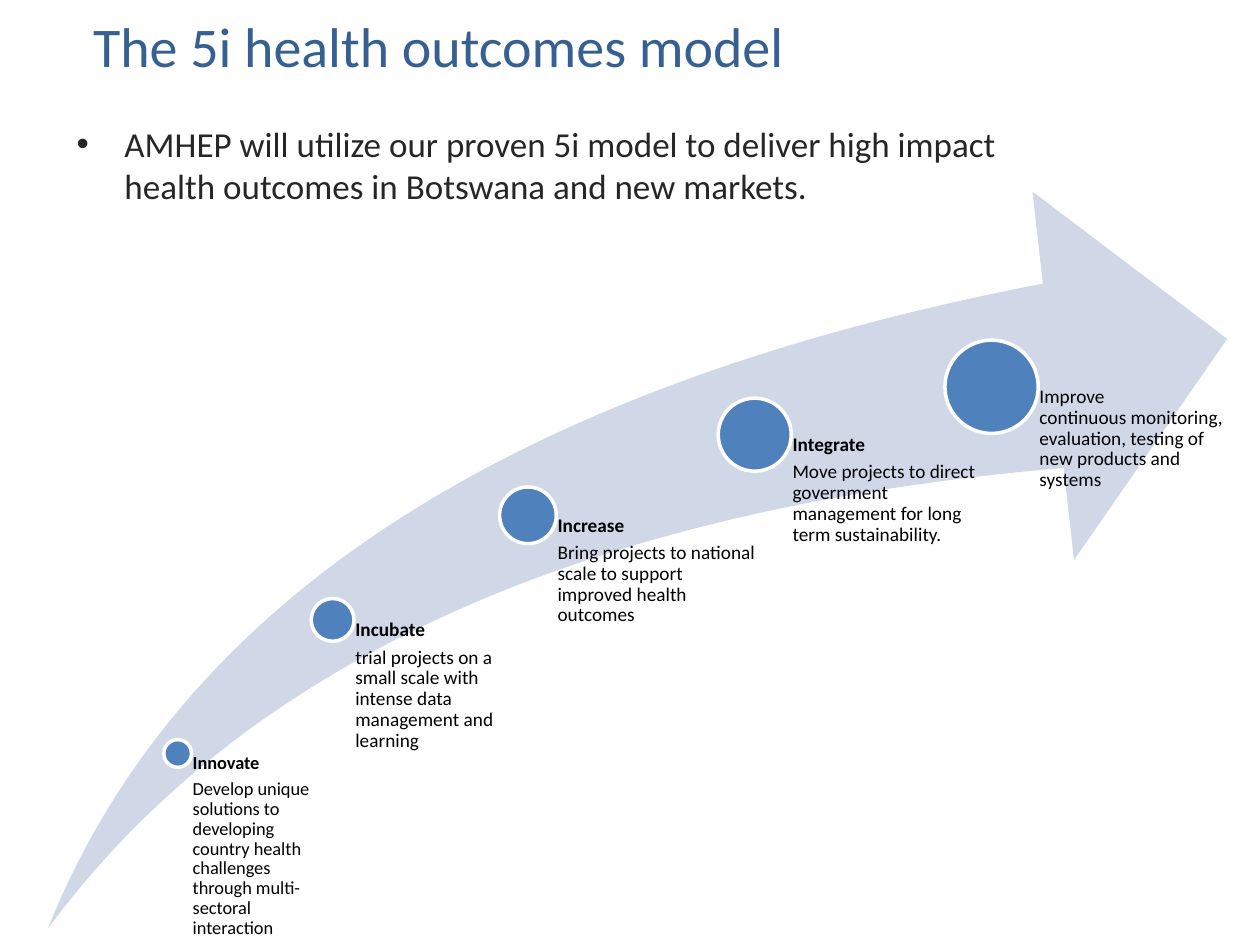
from dataclasses import dataclass

from lxml import etree
from pptx import Presentation
from pptx import util as u
from pptx.dml.color import RGBColor
from pptx.enum import shapes, text
from pptx.oxml import ns


@dataclass(frozen=True)
class Theme:
    font: str = "Calibri"
    title: str = "376092"
    body: str = "262626"
    label: str = "000000"
    swoosh: str = "D0D8E8"
    dot: str = "4F81BD"
    ring: str = "FFFFFF"
    title_size: float = 32
    body_size: float = 20
    label_size: float = 11
    small_label_size: float = 10.5


THEME = Theme()
STAGES = [
    ("Innovate", "Develop unique solutions to developing country health challenges "
     "through multi-sectoral interaction", (1.41, 5.98), 0.22, 1.23, THEME.small_label_size),
    ("Incubate", "trial projects on a small scale with intense data management and learning",
     (2.64, 4.92), 0.34, 1.55, THEME.label_size),
    ("Increase", "Bring projects to national scale to support improved health outcomes",
     (4.19, 4.09), 0.45, 1.81, THEME.label_size),
    ("Integrate", "Move projects to direct government management for long term sustainability.",
     (5.99, 3.45), 0.58, 1.87, THEME.label_size),
    ("", "Improve\vcontinuous monitoring, evaluation, testing of new products and systems",
     (7.87, 3.07), 0.74, 1.87, THEME.label_size),
]


def apply(target, formats):
    for name, value in formats.items():
        setattr(target, name, value)


def style(paragraph, size, color, bold=False):
    apply(paragraph.font, {"name": THEME.font, "size": u.Pt(size), "bold": bold})
    paragraph.font.color.rgb = RGBColor.from_string(color)


def add_frame(slide, box, **formats):
    frame = slide.shapes.add_textbox(*map(u.Inches, box)).text_frame
    apply(frame, {"word_wrap": True, "auto_size": text.MSO_AUTO_SIZE.NONE,
                  "vertical_anchor": text.MSO_ANCHOR.TOP, **formats})
    return frame


def add_filled(slide, preset, box, color):
    filled = slide.shapes.add_shape(preset, *map(u.Inches, box))
    filled.shadow.inherit = False
    filled.fill.solid()
    filled.fill.fore_color.rgb = RGBColor.from_string(color)
    filled.line.fill.background()
    return filled


def add_title(slide, box):
    heading = add_frame(slide, box).paragraphs[0]
    heading.text = "The 5i health outcomes model"
    style(heading, THEME.title_size, THEME.title)


def add_statement(slide, box):
    statement = add_frame(slide, box).paragraphs[0]
    statement.text = ("AMHEP will utilize our proven 5i model to deliver high impact "
                      "health outcomes in Botswana and new markets.")
    properties = statement._p.get_or_add_pPr()
    indent = u.Inches(0.38)
    properties.set("marL", str(indent))
    properties.set("indent", str(-indent))
    etree.SubElement(properties, ns.qn("a:buFont"), typeface="Arial")
    etree.SubElement(properties, ns.qn("a:buChar"), char="•")
    style(statement, THEME.body_size, THEME.body)


def add_stage(slide, stage, bottom):
    name, description, (x, y), diameter, width, size = stage
    radius = diameter / 2
    dot = add_filled(slide, shapes.MSO_SHAPE.OVAL,
                     (x - radius, y - radius, diameter, diameter), THEME.dot)
    dot.line.color.rgb = RGBColor.from_string(THEME.ring)
    dot.line.width = u.Pt(2)

    label = add_frame(slide, (x, y, width, bottom - y), margin_left=u.Inches(radius + 0.01),
                      margin_top=0, margin_right=0, margin_bottom=0)
    lines = [line for line in (name, description) if line]
    for index, line in enumerate(lines):
        paragraph = label.add_paragraph() if index else label.paragraphs[0]
        paragraph.text = line
        apply(paragraph, {"line_spacing": 0.9, "space_after": u.Pt(size * 0.35)})
        style(paragraph, size, THEME.label, bold=line == name)


def add_growth_path(slide, box):
    left, top, width, height = box
    swoosh = add_filled(slide, shapes.MSO_SHAPE.SWOOSH_ARROW, box, THEME.swoosh)
    for index in range(2):
        swoosh.adjustments[index] = 0.25
    for stage in STAGES:
        add_stage(slide, stage, top + height)


def main():
    deck = Presentation()
    apply(deck, {"slide_width": u.Inches(10), "slide_height": u.Inches(7.5)})
    slide = deck.slides.add_slide(deck.slide_layouts[6])
    add_statement(slide, (0.51, 0.92, 8.17, 1.08))
    add_title(slide, (0.64, 0.04, 8.92, 0.79))
    add_growth_path(slide, (0.38, 1.52, 9.36, 5.85))
    deck.save("out.pptx")


if __name__ == "__main__":
    main()
